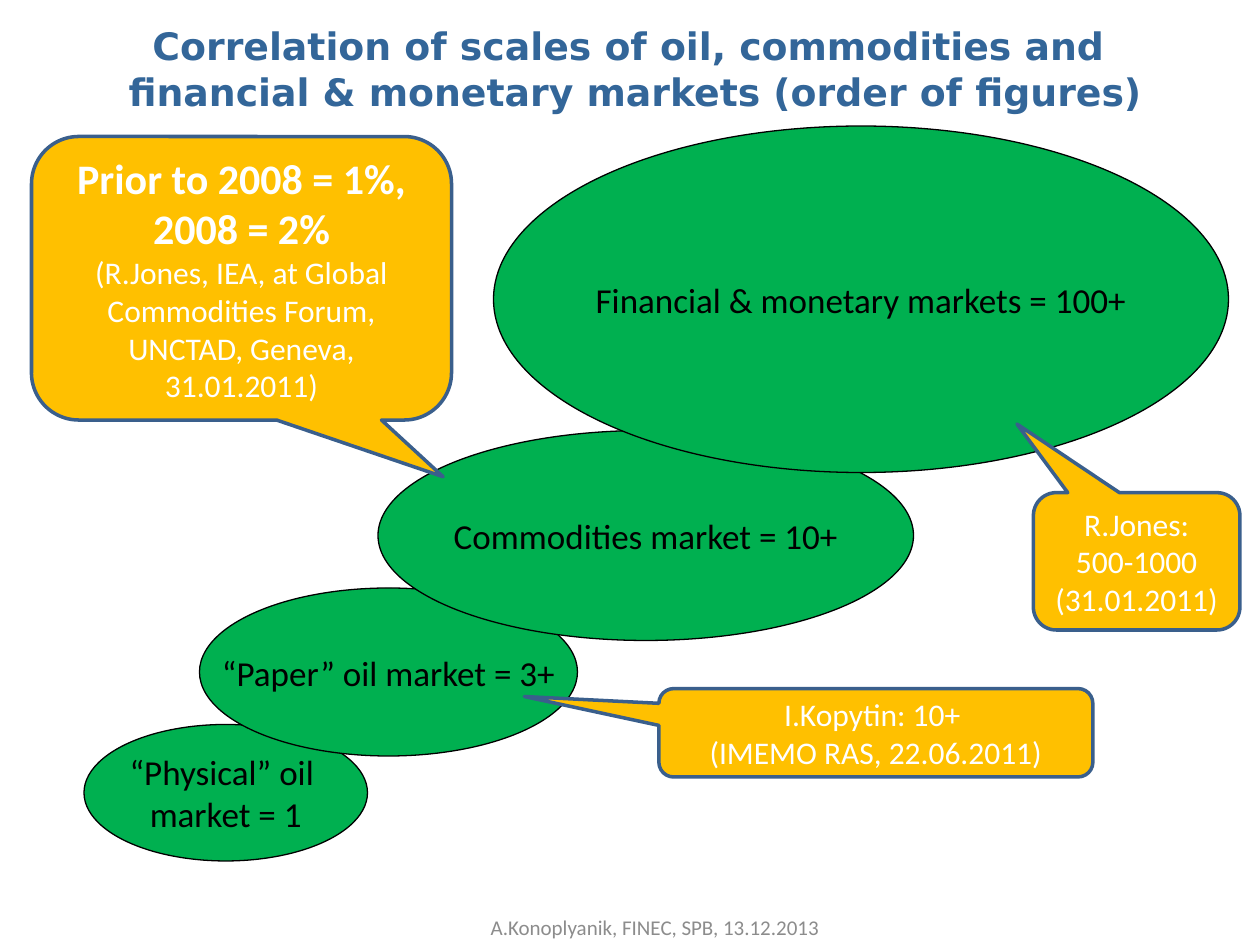
from pptx import Presentation
from pptx.dml.color import RGBColor
from pptx.enum.shapes import MSO_SHAPE as Shape
from pptx.enum.text import MSO_ANCHOR as Anchor, MSO_AUTO_SIZE as AutoSize, PP_ALIGN as Align
from pptx.util import Pt

GREEN = RGBColor(0x00, 0xB0, 0x50)
AMBER = RGBColor(0xFF, 0xC0, 0x00)
NAVY = RGBColor(0x3A, 0x5F, 0x8C)
BLUE = RGBColor(0x33, 0x66, 0x99)
GREY = RGBColor(0x8C, 0x8C, 0x8C)
BLACK = RGBColor(0x00, 0x00, 0x00)
WHITE = RGBColor(0xFF, 0xFF, 0xFF)

MARKETS = [
    ((48, 414, 162, 78), ["“Physical” oil ", "market = 1"]),
    ((114, 336, 216, 96), ["“Paper” oil market = 3+"]),
    ((216, 246, 306, 120), ["Commodities market = 10+"]),
    ((282, 72, 420, 198), ["Financial & monetary markets = 100+"]),
]
COMMENTS = [
    ((18, 78, 240, 162), (0.48, 0.7), [
        (["Prior to 2008 = 1%,", "2008 = 2%"], 24, True),
        (["(R.Jones, IEA, at Global Commodities Forum, UNCTAD, Geneva, 31.01.2011)"], 18, False),
    ]),
    ((376.5, 393.5, 248, 50.5), (-0.81, -0.41), [
        (["I.Kopytin: 10+ ", "(IMEMO RAS, 22.06.2011)"], 18, False),
    ]),
    ((590.5, 281.5, 118, 78.5), (-0.58, -1), [
        (["R.Jones: 500-1000", "(31.01.2011) "], 18, False),
    ]),
]


def write(shape, paragraphs, color, font="Calibri", wrap=True):
    frame = shape.text_frame
    frame.auto_size = AutoSize.NONE
    frame.word_wrap = wrap
    frame.vertical_anchor = Anchor.MIDDLE
    for index, (lines, size, bold) in enumerate(paragraphs):
        para = frame.add_paragraph() if index else frame.paragraphs[0]
        para.alignment = Align.CENTER
        for number, line in enumerate(lines):
            if number:
                para.add_line_break()
            span = para.add_run()
            span.text = line
            span.font.name = font
            span.font.size = Pt(size)
            span.font.bold = bold
            span.font.color.rgb = color


def add_filled(page, kind, box, fill, line, weight):
    shape = page.shapes.add_shape(kind, *map(Pt, box))
    shape.shadow.inherit = False
    shape.fill.solid()
    shape.fill.fore_color.rgb = fill
    shape.line.color.rgb = line
    shape.line.width = Pt(weight)
    return shape


def add_title(page, box):
    title = page.shapes.title
    title.left, title.top, title.width, title.height = map(Pt, box)
    lines = ["Correlation of scales of oil, commodities and ",
             "financial & monetary markets (order of figures)"]
    write(title, [(lines, 21.6, True)], BLUE, font="DejaVu Sans")


def add_market(page, box, lines):
    oval = add_filled(page, Shape.OVAL, box, GREEN, BLACK, 0.75)
    write(oval, [(lines, 20, False)], BLACK, wrap=False)


def add_comment(page, box, tip, paragraphs):
    callout = add_filled(page, Shape.ROUNDED_RECTANGULAR_CALLOUT, box, AMBER, NAVY, 2)
    callout.adjustments[0], callout.adjustments[1] = tip
    write(callout, paragraphs, WHITE)


def add_footer(page, box):
    footer = page.shapes.add_textbox(*map(Pt, box))
    write(footer, [(["A.Konoplyanik, FINEC, SPB, 13.12.2013"], 12, False)], GREY)


def main():
    deck = Presentation()
    deck.slide_width, deck.slide_height = Pt(720), Pt(540)
    page = deck.slides.add_slide(deck.slide_layouts[5])
    add_title(page, (12, 12, 702, 54))
    for box, lines in MARKETS:
        add_market(page, box, lines)
    for box, tip, paragraphs in COMMENTS:
        add_comment(page, box, tip, paragraphs)
    add_footer(page, (144.5, 512, 459.5, 36))
    deck.save("out.pptx")


if __name__ == "__main__":
    main()
